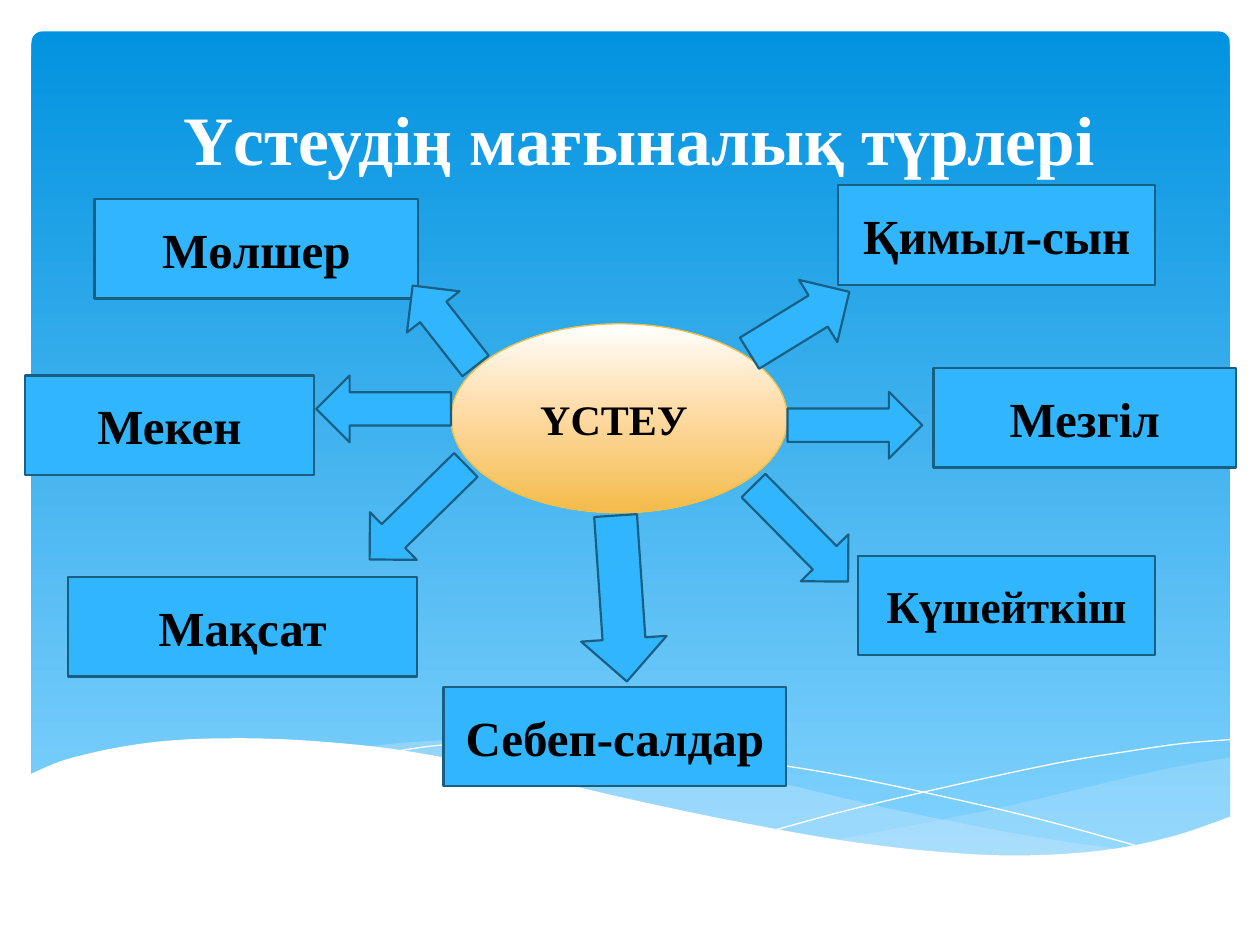
from dataclasses import dataclass

from lxml.etree import SubElement
from pptx import Presentation
from pptx.dml.color import RGBColor
from pptx.enum.shapes import MSO_SHAPE as Preset
from pptx.enum.text import MSO_ANCHOR as Anchor, PP_ALIGN as Align
from pptx.oxml.ns import qn
from pptx.util import Pt

PX = 9144  # EMU in one px, 100 px to the inch


@dataclass(frozen=True)
class Theme:
    font: str = "Times New Roman"
    white: str = "FFFFFF"
    black: str = "000000"
    wave: str = "C6E7FC"
    blue: str = "31B6FD"
    blue_edge: str = "195F84"
    gold_edge: str = "F5C040"
    sky: tuple = ((0, "0293E0"), (100, "83D3FE"))
    gold: tuple = ((0, "FFFFFF"), (44, "FFDDAA"), (100, "F4BB4A"))
    title_size: float = 39.6
    label_size: int = 28
    small_label_size: int = 26
    center_size: int = 24
    edge_width: float = 1.25
    center_edge_width: float = 0.75


def smooth(knots, steps=6):
    """Catmull-Rom curve through the knots."""
    padded = [knots[0], *knots, knots[-1]]
    points = []
    for a, b, c, d in zip(padded, padded[1:], padded[2:], padded[3:]):
        for step in range(steps):
            t = step / steps
            points.append(tuple(
                q + t / 2 * (r - p + t * (2 * p - 5 * q + 4 * r - s + t * (3 * (q - r) + s - p)))
                for p, q, r, s in zip(a, b, c, d)))
    return points + [knots[-1]]


class SlideBuilder:
    def __init__(self, page, theme):
        self.page = page
        self.theme = theme

    def paint(self, shape, fill=None, line=None, width=0, alpha=None):
        shape.shadow.inherit = False
        if fill is None:
            shape.fill.background()
        elif isinstance(fill, tuple):
            shape.fill.gradient()
            shape.fill.gradient_angle = 270
            stops = shape._element.spPr.find(".//" + qn("a:gsLst"))
            for stop in list(stops):
                stops.remove(stop)
            for percent, color in fill:
                stop = SubElement(stops, qn("a:gs"), pos=str(percent * 1000))
                SubElement(stop, qn("a:srgbClr"), val=color)
        else:
            shape.fill.solid()
            shape.fill.fore_color.rgb = RGBColor.from_string(fill)
            if alpha is not None:
                color = shape._element.spPr.find(qn("a:solidFill"))[0]
                SubElement(color, qn("a:alpha"), val=str(alpha * 1000))
        if line is None:
            shape.line.fill.background()
        else:
            shape.line.color.rgb = RGBColor.from_string(line)
            shape.line.width = Pt(width)

    def set_text(self, box, text, size, color, anchor=Anchor.MIDDLE):
        frame = box.text_frame
        frame.word_wrap = True
        frame.vertical_anchor = anchor
        para = frame.paragraphs[0]
        para.text = text
        para.alignment = Align.CENTER
        para.font.name = self.theme.font
        para.font.size = Pt(size)
        para.font.bold = True
        para.font.color.rgb = RGBColor.from_string(color)

    def shape(self, preset, place, **style):
        shape = self.page.shapes.add_shape(preset, *(value * PX for value in place))
        self.paint(shape, **style)
        return shape

    def curve(self, points, closed=True, **style):
        start, *rest = [(x * PX, y * PX) for x, y in points]
        builder = self.page.shapes.build_freeform(*start, scale=1.0)
        builder.add_line_segments(rest, close=closed)
        self.paint(builder.convert_to_shape(), **style)

    def title(self, place, text):
        box = self.page.shapes.add_textbox(*(value * PX for value in place))
        self.set_text(box, text, self.theme.title_size, self.theme.white, Anchor.BOTTOM)

    def center(self, place, text):
        theme = self.theme
        oval = self.shape(Preset.OVAL, place, fill=theme.gold,
                          line=theme.gold_edge, width=theme.center_edge_width)
        self.set_text(oval, text, theme.center_size, theme.black)

    def blue_shape(self, preset, place):
        return self.shape(preset, place, fill=self.theme.blue,
                          line=self.theme.blue_edge, width=self.theme.edge_width)

    def label(self, left, top, width, text, size):
        box = self.blue_shape(Preset.RECTANGLE, (left, top, width, 79))
        self.set_text(box, text, size, self.theme.black)

    def arrow(self, place, angle):
        self.blue_shape(Preset.RIGHT_ARROW, place).rotation = angle


def main():
    deck = Presentation()
    deck.slide_width, deck.slide_height = 1000 * PX, 750 * PX
    theme = Theme()
    slide = SlideBuilder(deck.slides.add_slide(deck.slide_layouts[6]), theme)

    # Sky panel
    panel = slide.shape(Preset.ROUNDED_RECTANGLE, (25, 25, 951, 660), fill=theme.sky)
    panel.adjustments[0] = 0.013

    # Pale waves
    right_top = [(977, 601), (922, 611), (862, 625), (780, 644), (662, 667)]
    right_bottom = [(662, 667), (719, 674), (770, 679), (815, 680), (864, 677),
                    (907, 671), (944, 661), (977, 649)]
    slide.curve(smooth(right_top) + smooth(right_bottom), fill=theme.wave, alpha=29)
    long_top = [(894, 675), (808, 662), (707, 642), (630, 624), (570, 610), (515, 600),
                (442, 591), (380, 587), (328, 589), (287, 593)]
    long_bottom = [(287, 593), (343, 601), (405, 613), (450, 624), (530, 642), (602, 657),
                   (681, 670), (749, 678), (808, 680), (859, 679), (894, 675)]
    slide.curve(smooth(long_top) + smooth(long_bottom), fill=theme.wave, alpha=40)

    # Thin white lines
    falling = [(310, 597), (344, 592), (388, 589), (451, 589), (511, 594), (582, 602),
               (666, 615), (761, 635), (832, 652), (908, 673)]
    rising = [(614, 659), (673, 643), (749, 625), (837, 606), (897, 596), (939, 590), (976, 587)]
    for knots in (falling, rising):
        slide.curve(smooth(knots), closed=False, line=theme.white)

    # White foreground wave
    crest = [(977, 648), (930, 664), (875, 675), (809, 679), (744, 676), (668, 667),
             (579, 651), (503, 635), (447, 622), (391, 609), (340, 599), (292, 592),
             (230, 587), (177, 586), (132, 588), (95, 593), (67, 599), (46, 605), (23, 615)]
    slide.curve(smooth(crest) + [(23, 731), (977, 731)], fill=theme.white)

    # Title and central idea
    slide.title((33, 76, 949, 71), "Үстеудің мағыналық түрлері")
    slide.center((358, 257, 267, 150), "ҮСТЕУ ")

    # Kinds of adverb
    for left, top, width, text, size in (
        (741, 292, 240, "Мезгіл", theme.label_size),
        (665, 147, 252, "Қимыл-сын", theme.label_size),
        (75, 158, 257, "Мөлшер", theme.label_size),
        (20, 298, 229, "Мекен", theme.label_size),
        (681, 441, 236, "Күшейткіш", theme.small_label_size),
        (54, 458, 277, "Мақсат", theme.label_size),
        (352, 545, 272, "Себеп-салдар", theme.label_size),
    ):
        slide.label(left, top, width, text, size)

    # Arrows from the centre to each kind
    for place, angle in (
        ((625, 311, 107, 53), 0),
        ((251, 298, 107, 53), 180),
        ((582, 397, 107, 53), 45.4),
        ((312, 232, 81, 53), 231.9),
        ((588, 227, 93, 58), 328.4),
        ((278, 380, 107, 53), 135.5),
        ((427, 441, 132, 68), 86.1),
    ):
        slide.arrow(place, angle)

    deck.save("out.pptx")


if __name__ == "__main__":
    main()
